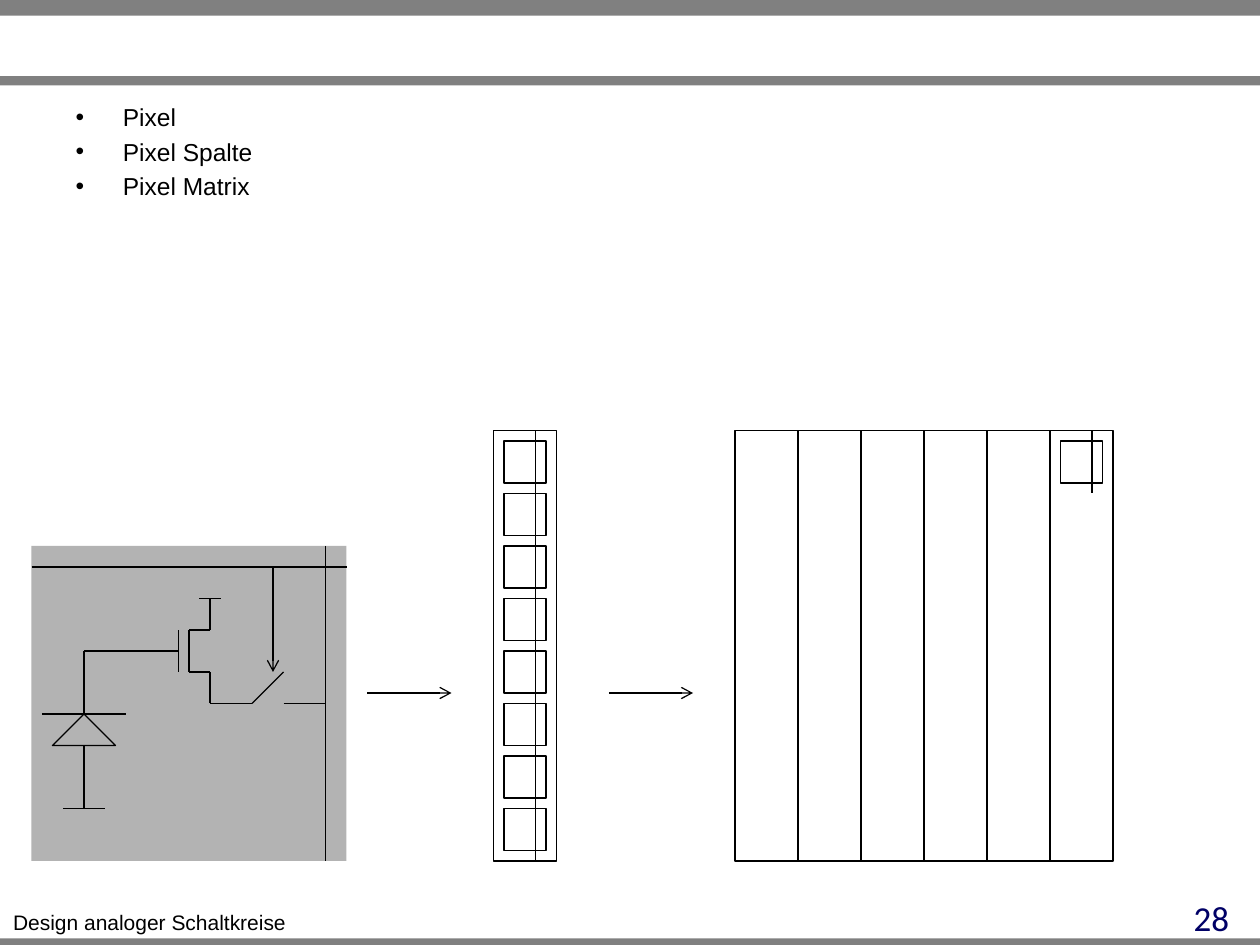
from itertools import pairwise

from lxml.etree import SubElement
from pptx import Presentation
from pptx.dml.color import RGBColor
from pptx.enum.shapes import MSO_CONNECTOR, MSO_SHAPE
from pptx.enum.text import MSO_ANCHOR, MSO_AUTO_SIZE, PP_ALIGN
from pptx.oxml.ns import qn
from pptx.util import Pt

EMU_PER_PX = 9525
COLORS = {
    "bar": "808080",
    "pixel": "B3B3B3",
    "ink": "000000",
    "number": "000066",
}
COLUMN_TOP, COLUMN_WIDTH, COLUMN_HEIGHT = 328, 48, 328
PIXEL_PITCH = 40


def px(length):
    """Turn pixels into EMU."""
    return length * EMU_PER_PX


def rgb(name):
    """Look up a named colour."""
    return RGBColor.from_string(COLORS[name])


def style_font(paragraph, face, size, color):
    """Set the font of a whole paragraph."""
    paragraph.font.name = face
    paragraph.font.size = Pt(size)
    paragraph.font.color.rgb = rgb(color)


def add_box(shapes, left, top, width, height, fill=None, kind=MSO_SHAPE.RECTANGLE):
    """Draw a filled box without outline, or an outlined box without fill."""
    box = shapes.add_shape(kind, px(left), px(top), px(width), px(height))
    box.shadow.inherit = False
    if fill:
        box.fill.solid()
        box.fill.fore_color.rgb = rgb(fill)
        box.line.fill.background()
    else:
        box.fill.background()
        box.line.color.rgb = rgb("ink")
        box.line.width = Pt(0.75)


def add_wire(shapes, start, end, arrow=False):
    """Draw a thin line, with an open arrowhead at its end if asked."""
    wire = shapes.add_connector(
        MSO_CONNECTOR.STRAIGHT, *map(px, start), *map(px, end)
    )
    wire.line.color.rgb = rgb("ink")
    wire.line.width = Pt(0.75)
    if arrow:
        SubElement(wire.line._get_or_add_ln(), qn("a:tailEnd"), type="arrow")
    SubElement(wire._element.spPr, qn("a:effectLst"))


def add_label(shapes, text, frame, align, face, size, color, wrap):
    """Add a one-line text box."""
    label = shapes.add_textbox(*map(px, frame)).text_frame
    label.word_wrap = wrap
    paragraph = label.paragraphs[0]
    paragraph.text = text
    paragraph.alignment = align
    style_font(paragraph, face, size, color)


def fill_list(body, items):
    """Place the body placeholder and write its bulleted items."""
    body.left, body.top, body.width, body.height = map(px, (48, 73, 864, 152))
    frame = body.text_frame
    frame.auto_size = MSO_AUTO_SIZE.NONE
    frame.vertical_anchor = MSO_ANCHOR.TOP
    frame.text = "\n".join(items)
    for index, paragraph in enumerate(frame.paragraphs):
        properties = paragraph._p.get_or_add_pPr()
        properties.set("marL", str(px(36)))
        properties.set("indent", str(px(-36)))
        SubElement(properties, qn("a:buChar"), char="•")
        paragraph.space_before = Pt(3 if index else 0)
        style_font(paragraph, "Arial", 14, "ink")


def add_pixel_circuit(shapes):
    """Draw the pixel with photodiode, transistor, switch and its lines."""
    circuit = shapes.add_group_shape().shapes
    add_box(circuit, 24, 416, 240, 240, "pixel")
    wires = {
        "supply": [(152, 456), (168, 456)],
        "channel": [(160, 456), (160, 480), (144, 480), (144, 512),
                    (160, 512), (160, 536), (192, 536), (216, 512)],
        "gate": [(136, 480), (136, 512)],
        "gate to diode": [(136, 496), (120, 496), (64, 496), (64, 544)],
        "cathode": [(32, 544), (96, 544)],
        "anode": [(64, 568), (64, 616)],
        "ground": [(48, 616), (80, 616)],
        "switch output": [(216, 536), (248, 536)],
        "column line": [(248, 416), (248, 656)],
        "row line": [(24, 432), (264, 432)],
    }
    for points in wires.values():
        for start, end in pairwise(points):
            add_wire(circuit, start, end)
    add_box(circuit, 40, 544, 48, 24, kind=MSO_SHAPE.ISOSCELES_TRIANGLE)
    add_wire(circuit, (208, 432), (208, 512), arrow=True)


def add_column(shapes, left):
    """Draw the outline of one pixel column."""
    add_box(shapes, left, COLUMN_TOP, COLUMN_WIDTH, COLUMN_HEIGHT)


def add_pixel(shapes, column_left, row):
    """Draw one pixel and its piece of the column line."""
    pixel = shapes.add_group_shape().shapes
    top = COLUMN_TOP + row * PIXEL_PITCH
    add_box(pixel, column_left + 8, top + 8, 32, 32)
    add_wire(pixel, (column_left + 32, top), (column_left + 32, top + 48))


def main():
    """Build the slide and save it."""
    presentation = Presentation()
    presentation.slide_width, presentation.slide_height = px(960), px(720)
    slide = presentation.slides.add_slide(presentation.slide_layouts[1])
    shapes = slide.shapes
    title = shapes.title._element
    title.getparent().remove(title)

    for top, height in ((715, 8), (0, 12), (58, 7)):
        add_box(shapes, 0, top, 960, height, "bar")
    add_label(shapes, "Design analoger Schaltkreise", (0, 688, 228, 29),
              PP_ALIGN.CENTER, "Arial", 12, "ink", False)
    add_label(shapes, "28", (722, 678, 224, 30),
              PP_ALIGN.RIGHT, "Calibri", 20, "number", True)
    fill_list(slide.placeholders[1], ["Pixel", "Pixel Spalte", "Pixel Matrix"])

    add_pixel_circuit(shapes)
    single_column = 376
    add_column(shapes, single_column)
    for row in range(8):
        add_pixel(shapes, single_column, row)

    matrix_columns = [560 + index * COLUMN_WIDTH for index in range(6)]
    for left in matrix_columns:
        add_column(shapes, left)
    add_pixel(shapes, matrix_columns[-1], 0)

    for left in (280, 464):
        add_wire(shapes, (left, 528), (left + 64, 528), arrow=True)
    presentation.save("out.pptx")


if __name__ == "__main__":
    main()
